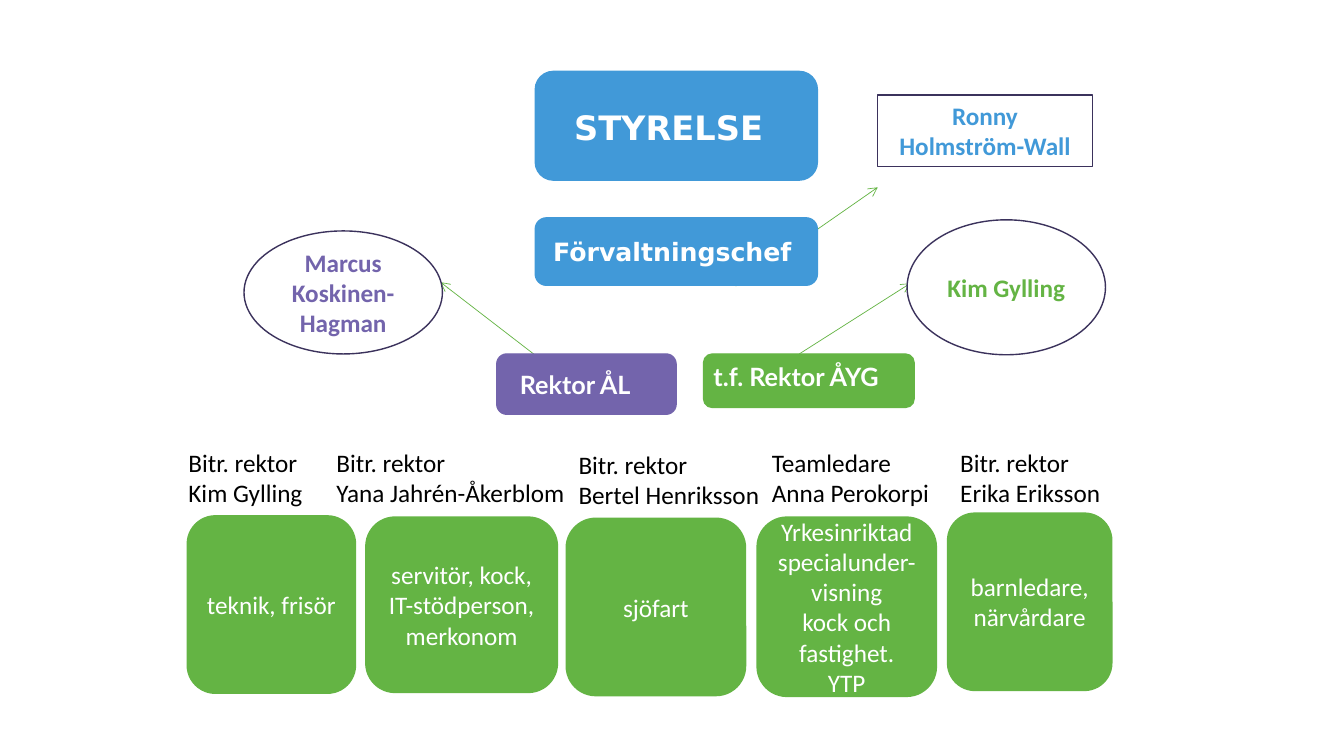
from lxml import etree
from pptx import Presentation, util as u
from pptx.dml.color import RGBColor
from pptx.enum import shapes, text
from pptx.oxml.ns import qn

BLUE, GREEN, PURPLE = "4199D8", "64B444", "7364AC"
WHITE, BLACK, NAVY = "FFFFFF", "000000", "3B325C"
ROUND = shapes.MSO_SHAPE.ROUNDED_RECTANGLE
OVAL = shapes.MSO_SHAPE.OVAL
RECT = shapes.MSO_SHAPE.RECTANGLE


def paint(target, tint):
    target.rgb = RGBColor.from_string(tint)


def write(shape, words, tint, font="Calibri", size=18, bold=False, align=text.PP_ALIGN.CENTER):
    frame = shape.text_frame
    frame.word_wrap = True
    frame.text = words
    for para in frame.paragraphs:
        para.alignment = align
        for run in para.runs:
            run.font.name, run.font.size, run.font.bold = font, u.Pt(size), bold
            paint(run.font.color, tint)


deck = Presentation()
deck.slide_width, deck.slide_height = u.Cm(33.87), u.Cm(19.05)
slide = deck.slides.add_slide(deck.slide_layouts[6])

arrows = [
    (20.14, 8.92, 22.94, 7.14),
    (18.54, 7.21, 22.12, 4.72),
    (14.5, 9.73, 11.1, 7.11),
]
for ends in arrows:
    arrow = slide.shapes.add_connector(shapes.MSO_CONNECTOR.STRAIGHT, *map(u.Cm, ends))
    arrow.line.width = u.Pt(0.5)
    paint(arrow.line.color, GREEN)
    etree.SubElement(arrow.line._get_or_add_ln(), qn("a:tailEnd"), type="arrow")
    etree.SubElement(arrow._element.spPr, qn("a:effectLst"))

boxes = [
    (OVAL, 22.86, 5.54, 5, 3.4, WHITE, NAVY, "Kim Gylling", GREEN),
    (RECT, 22.12, 2.39, 5.41, 1.8, WHITE, NAVY, "Ronny Holmström-Wall", BLUE),
    (OVAL, 6.15, 5.82, 5, 3.1, WHITE, NAVY, "Marcus Koskinen-Hagman", PURPLE),
    (ROUND, 4.72, 13, 4.24, 4.47, GREEN, GREEN, "teknik, frisör", WHITE),
    (ROUND, 9.22, 13.03, 4.83, 4.42, GREEN, GREEN, "servitör, kock, IT-stödperson, merkonom", WHITE),
    (ROUND, 14.27, 13.06, 4.52, 4.47, GREEN, GREEN, "sjöfart", WHITE),
    (ROUND, 19.08, 13.03, 4.52, 4.52, GREEN, GREEN,
     "Yrkesinriktad specialunder-visning\nkock och\nfastighet.\nYTP", WHITE),
    (ROUND, 23.88, 12.93, 4.14, 4.47, GREEN, GREEN, "barnledare, närvårdare", WHITE),
    (ROUND, 13.49, 1.8, 7.11, 2.74, BLUE, BLUE, "", WHITE),
    (ROUND, 13.49, 5.49, 7.11, 1.7, BLUE, BLUE, "", WHITE),
    (ROUND, 12.52, 8.92, 4.52, 1.52, PURPLE, PURPLE, "", WHITE),
    (ROUND, 17.73, 8.92, 5.31, 1.35, GREEN, GREEN, "", WHITE),
]
for kind, left, top, wide, high, fill, edge, words, tint in boxes:
    box = slide.shapes.add_shape(kind, *map(u.Cm, (left, top, wide, high)))
    box.shadow.inherit = False
    box.fill.solid()
    paint(box.fill.fore_color, fill)
    paint(box.line.color, edge)
    box.line.width = u.Pt(1)
    box.text_frame.vertical_anchor = text.MSO_ANCHOR.MIDDLE
    if words:
        write(box, words, tint, bold=kind != ROUND)

labels = [
    (14.22, 2.57, 5.66, 1.27, "STYRELSE", WHITE, "DejaVu Sans", 24),
    (13.69, 5.82, 6.73, 1.02, "Förvaltningschef", WHITE, "DejaVu Sans", 18),
    (12.85, 9.17, 4.01, 1.02, "Rektor ÅL", WHITE, "Lato", 18),
    (17.73, 8.97, 5.82, 1.02, "t.f. Rektor ÅYG", WHITE, "Lato", 18),
    (4.5, 11.15, 3.73, 1.8, "Bitr. rektor\nKim Gylling", BLACK, "Calibri", 18),
    (8.23, 11.15, 6.35, 1.8, "Bitr. rektor\nYana Jahrén-Åkerblom", BLACK, "Calibri", 18),
    (14.33, 11.2, 6.38, 1.8, "Bitr. rektor\nBertel Henriksson", BLACK, "Calibri", 18),
    (19.2, 11.15, 4.52, 1.8, "Teamledare\nAnna Perokorpi", BLACK, "Calibri", 18),
    (23.95, 11.15, 4.57, 1.8, "Bitr. rektor\nErika Eriksson", BLACK, "Calibri", 18),
]
for left, top, wide, high, words, tint, font, size in labels:
    label = slide.shapes.add_textbox(*map(u.Cm, (left, top, wide, high)))
    write(label, words, tint, font, size, tint == WHITE, text.PP_ALIGN.LEFT)

deck.save("out.pptx")
